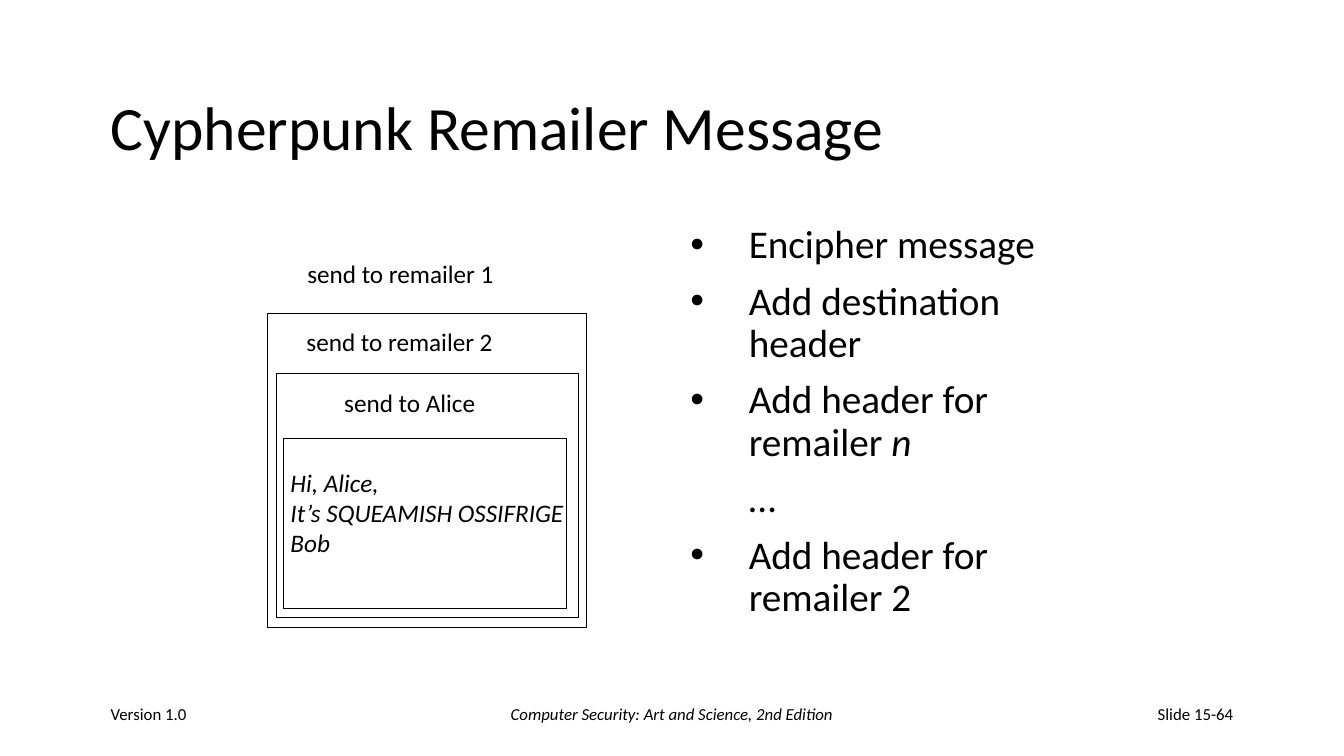
from dataclasses import dataclass

import pptx
import pptx.dml.color
import pptx.enum.shapes
import pptx.enum.text
import pptx.oxml
import pptx.oxml.ns
import pptx.util
from lxml import etree

COLORS = {"ink": "000000", "paper": "FFFFFF"}
FONT = "Calibri"
COLUMNS, ROWS = 160, 90
CELL = pptx.util.Inches(1 / 12)
BULLET_INDENT = pptx.util.Inches(0.58)

ALIGN = pptx.enum.text.PP_ALIGN
ANCHOR = pptx.enum.text.MSO_ANCHOR
AUTO_SIZE = pptx.enum.text.MSO_AUTO_SIZE


@dataclass(frozen=True)
class Area:
    """A place on the slide, in grid columns and rows."""
    column: float
    row: float
    columns: float
    rows: float

    def lengths(self) -> list[int]:
        return [round(cells * CELL) for cells in
                (self.column, self.row, self.columns, self.rows)]


@dataclass(frozen=True)
class Label:
    area: Area
    lines: tuple[str, ...]
    size: int = 18
    italic: bool = False
    align: ALIGN = ALIGN.LEFT
    anchor: ANCHOR = ANCHOR.TOP
    wrap: bool = False
    auto_size: AUTO_SIZE = AUTO_SIZE.SHAPE_TO_FIT_TEXT


@dataclass(frozen=True)
class Step:
    text: str
    italic_end: str = ""
    bullet: bool = True


TITLE = Label(Area(12, 8, 136, 15), ("Cypherpunk Remailer Message",), size=44,
              anchor=ANCHOR.MIDDLE, wrap=True, auto_size=AUTO_SIZE.NONE)

STEPS_AREA = Area(81, 26.2, 50, 54)
STEPS = (
    Step("Encipher message"),
    Step("Add destination header"),
    Step("Add header for remailer ", italic_end="n"),
    Step("…", bullet=False),
    Step("Add header for remailer 2"),
)

ENVELOPES = (
    Area(33.8, 52.2, 33.7, 20.3),
    Area(32.9, 44.5, 36, 29),
    Area(31.8, 37.3, 38, 37.4),
)

ENVELOPE_LABELS = (
    Label(Area(33.4, 55, 36, 12.1),
          ("Hi, Alice,", "It’s SQUEAMISH OSSIFRIGE", "Bob"), italic=True, wrap=True),
    Label(Area(39.8, 45.5, 18.2, 4.8), ("send to Alice",)),
    Label(Area(35.3, 38.3, 24.8, 4.8), ("send to remailer 2",)),
    Label(Area(35.4, 30.2, 24.8, 4.8), ("send to remailer 1",)),
)

FOOTER_FORMAT = {"size": 12, "anchor": ANCHOR.MIDDLE, "wrap": True,
                 "auto_size": AUTO_SIZE.NONE}
FOOTERS = (
    Label(Area(12, 82, 33.3, 6), ("Version 1.0",), **FOOTER_FORMAT),
    Label(Area(54.7, 82, 50.6, 6),
          ("Computer Security: Art and Science, 2nd Edition",),
          italic=True, align=ALIGN.CENTER, **FOOTER_FORMAT),
    Label(Area(114.7, 82, 33.3, 6), ("Slide 15-64",), align=ALIGN.RIGHT,
          **FOOTER_FORMAT),
)


def set_all(target, values: dict) -> None:
    for name, value in values.items():
        setattr(target, name, value)


def color(name: str) -> pptx.dml.color.RGBColor:
    return pptx.dml.color.RGBColor.from_string(COLORS[name])


def format_font(font, size: int, italic: bool = False) -> None:
    set_all(font, {"name": FONT, "size": pptx.util.Pt(size), "italic": italic})
    font.color.rgb = color("ink")


def place(shape, area: Area) -> None:
    set_all(shape, dict(zip(("left", "top", "width", "height"), area.lengths())))


def write_label(shape, label: Label) -> None:
    frame = shape.text_frame
    frame.text = "\n".join(label.lines)
    set_all(frame, {"word_wrap": label.wrap, "auto_size": label.auto_size,
                    "vertical_anchor": label.anchor})
    for paragraph in frame.paragraphs:
        paragraph.alignment = label.align
        for run in paragraph.runs:
            format_font(run.font, label.size, label.italic)


def add_label(slide, label: Label) -> None:
    write_label(slide.shapes.add_textbox(*label.area.lengths()), label)


def add_title(slide) -> None:
    title = slide.shapes.title
    place(title, TITLE.area)
    write_label(title, TITLE)
    title.text_frame.paragraphs[0].line_spacing = 0.9


def add_envelope(slide, area: Area) -> None:
    """Draw one unfilled frame of the nested message."""
    shape = slide.shapes.add_shape(pptx.enum.shapes.MSO_SHAPE.RECTANGLE,
                                   *area.lengths())
    shape.shadow.inherit = False
    shape.fill.background()
    shape.line.color.rgb = color("ink")
    shape.line.width = pptx.util.Pt(0.75)


def indent_step(paragraph, bullet: bool) -> None:
    properties = paragraph._p.get_or_add_pPr()
    properties.set("marL", str(BULLET_INDENT))
    properties.set("indent", str(-BULLET_INDENT if bullet else 0))
    if bullet:
        font = etree.SubElement(properties, pptx.oxml.ns.qn("a:buFont"))
        font.set("typeface", "Arial")
        mark = etree.SubElement(properties, pptx.oxml.ns.qn("a:buChar"))
        mark.set("char", "•")


def add_steps(slide) -> None:
    frame = slide.shapes.add_textbox(*STEPS_AREA.lengths()).text_frame
    frame.word_wrap = True
    for index, step in enumerate(STEPS):
        paragraph = frame.add_paragraph() if index else frame.paragraphs[0]
        indent_step(paragraph, step.bullet)
        set_all(paragraph, {"line_spacing": 0.9,
                            "space_before": pptx.util.Pt(10 if index else 0)})
        for text, italic in ((step.text, False), (step.italic_end, True)):
            if text:
                run = paragraph.add_run()
                run.text = text
                format_font(run.font, 28, italic)


def main() -> None:
    presentation = pptx.Presentation()
    set_all(presentation, {"slide_width": COLUMNS * CELL,
                           "slide_height": ROWS * CELL})
    slide = presentation.slides.add_slide(
        presentation.slide_layouts.get_by_name("Title Only"))
    slide.background.fill.solid()
    slide.background.fill.fore_color.rgb = color("paper")
    add_title(slide)
    add_steps(slide)
    for area in ENVELOPES:
        add_envelope(slide, area)
    for label in ENVELOPE_LABELS + FOOTERS:
        add_label(slide, label)
    presentation.save("out.pptx")


if __name__ == "__main__":
    main()
